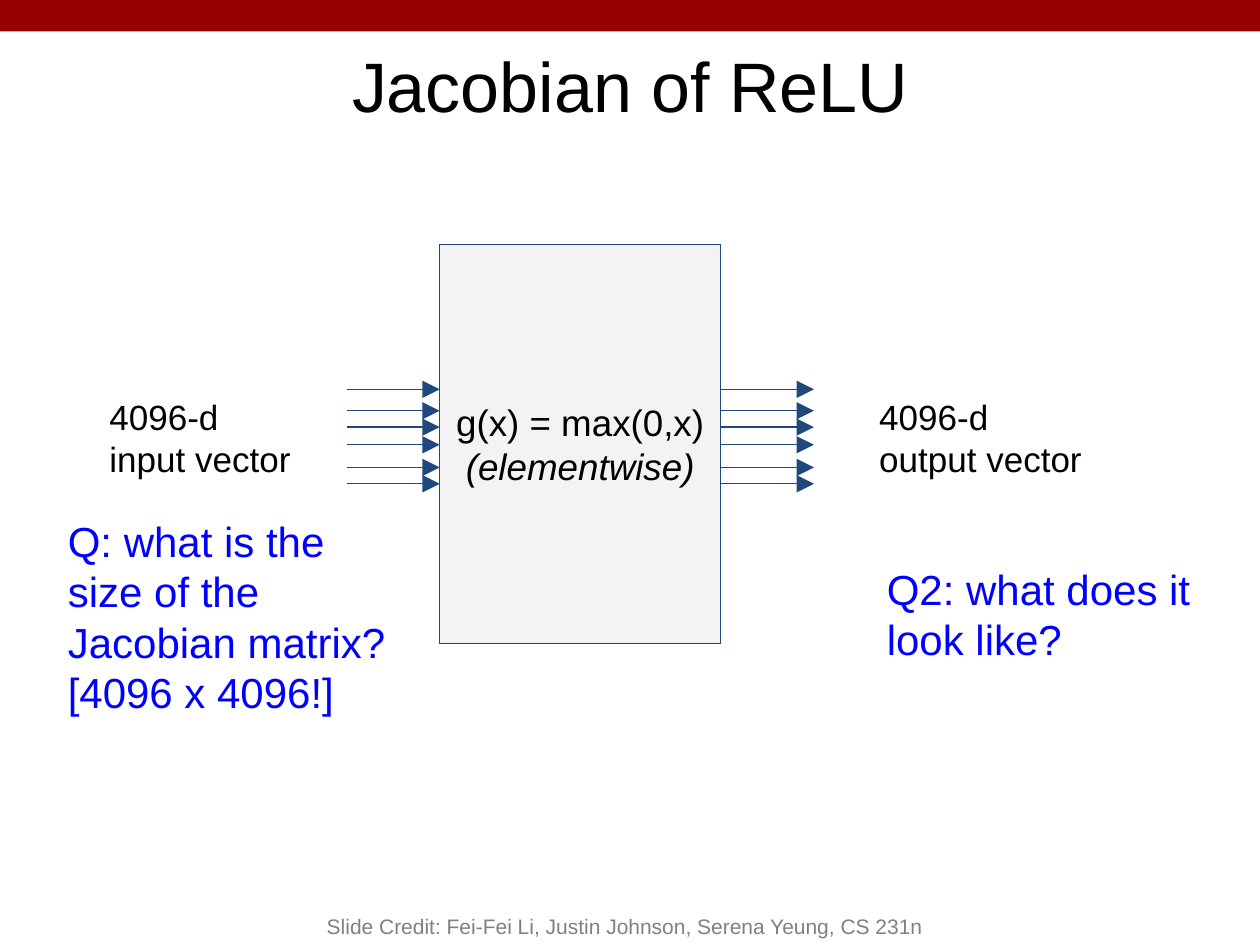
from pptx import Presentation
from pptx.dml.color import RGBColor
from pptx.enum.shapes import MSO_CONNECTOR, MSO_SHAPE
from pptx.enum.text import MSO_ANCHOR as Anchor, PP_ALIGN as Align
from pptx.oxml.ns import qn
from pptx.util import Inches, Pt
from lxml.etree import SubElement

COLORS = {
    "banner": "990000",
    "box": "F3F3F3",
    "line": "1F497D",
    "question": "0000FF",
    "text": "000000",
    "credit": "808080",
}
ARROW_LEVELS = (3.09, 3.26, 3.39, 3.53, 3.71, 3.84)
ARROW_LENGTH = 0.74
BOX_LEFT, BOX_TOP, BOX_WIDTH, BOX_HEIGHT = 3.49, 1.94, 2.23, 3.17


class SlideBuilder:
    """Draws styled elements on one slide."""

    font = "Arial"
    line_width = Pt(0.75)

    def __init__(self, slide):
        self.slide = slide

    def color(self, name):
        return RGBColor.from_string(COLORS[name])

    def set_text(self, shape, text, size, color, align=Align.LEFT, anchor=Anchor.TOP, inset=0.1):
        frame = shape.text_frame
        frame.text = text
        frame.word_wrap = True
        frame.vertical_anchor = anchor
        frame.margin_left = frame.margin_right = Inches(0.1)
        frame.margin_top = frame.margin_bottom = Inches(inset)
        for paragraph in frame.paragraphs:
            paragraph.alignment = align
            for run in paragraph.runs:
                run.font.name = self.font
                run.font.size = Pt(size)
                run.font.color.rgb = self.color(color)

    def title(self, text, left, top, width, height):
        shape = self.slide.shapes.title
        shape.left, shape.top = Inches(left), Inches(top)
        shape.width, shape.height = Inches(width), Inches(height)
        self.set_text(shape, text, 40, "text", Align.CENTER, Anchor.MIDDLE, 0.05)

    def label(self, text, left, top, width, height, size, color, **style):
        shape = self.slide.shapes.add_textbox(
            Inches(left), Inches(top), Inches(width), Inches(height))
        self.set_text(shape, text, size, color, **style)

    def rectangle(self, left, top, width, height, fill, line=None):
        shape = self.slide.shapes.add_shape(
            MSO_SHAPE.RECTANGLE, Inches(left), Inches(top), Inches(width), Inches(height))
        shape.shadow.inherit = False
        shape.fill.solid()
        shape.fill.fore_color.rgb = self.color(fill)
        if line:
            shape.line.color.rgb = self.color(line)
            shape.line.width = self.line_width
        else:
            shape.line.fill.background()
        return shape

    def arrow(self, left, right, level):
        connector = self.slide.shapes.add_connector(
            MSO_CONNECTOR.STRAIGHT, Inches(left), Inches(level), Inches(right), Inches(level))
        connector.line.color.rgb = self.color("line")
        connector.line.width = self.line_width
        properties = connector._element.spPr
        outline = properties.find(qn("a:ln"))
        SubElement(outline, qn("a:tailEnd"), type="triangle", w="lg", len="lg")
        SubElement(properties, qn("a:effectLst"))


def main():
    presentation = Presentation()
    presentation.slide_width, presentation.slide_height = Inches(10), Inches(7.5)
    builder = SlideBuilder(presentation.slides.add_slide(presentation.slide_layouts[5]))

    builder.rectangle(0, 0, 10, 0.25, "banner")
    builder.title("Jacobian of ReLU", 0.34, 0.25, 9.32, 0.84)

    function_box = builder.rectangle(BOX_LEFT, BOX_TOP, BOX_WIDTH, BOX_HEIGHT, "box", "line")
    builder.set_text(function_box, "g(x) = max(0,x)\n(elementwise)", 21, "text",
                     Align.CENTER, Anchor.MIDDLE)
    function_box.text_frame.paragraphs[1].runs[0].font.italic = True

    for start in (BOX_LEFT - ARROW_LENGTH, BOX_LEFT + BOX_WIDTH):
        for level in ARROW_LEVELS:
            builder.arrow(start, start + ARROW_LENGTH, level)

    builder.label("4096-d\ninput vector", 0.77, 3.04, 2.66, 0.51, 20, "text")
    builder.label("4096-d\noutput vector", 6.88, 3.04, 2.06, 0.51, 20, "text")
    builder.label("Q: what is the size of the Jacobian matrix?\n[4096 x 4096!]",
                  0.44, 3.99, 2.8, 1.26, 24, "question")
    builder.label("Q2: what does it look like?", 6.94, 4.37, 2.8, 1.26, 24, "question")
    builder.label("Slide Credit: Fei-Fei Li, Justin Johnson, Serena Yeung, CS 231n",
                  2, 7, 5.92, 0.5, 12, "credit",
                  align=Align.CENTER, anchor=Anchor.BOTTOM, inset=0.05)

    presentation.save("out.pptx")


if __name__ == "__main__":
    main()
